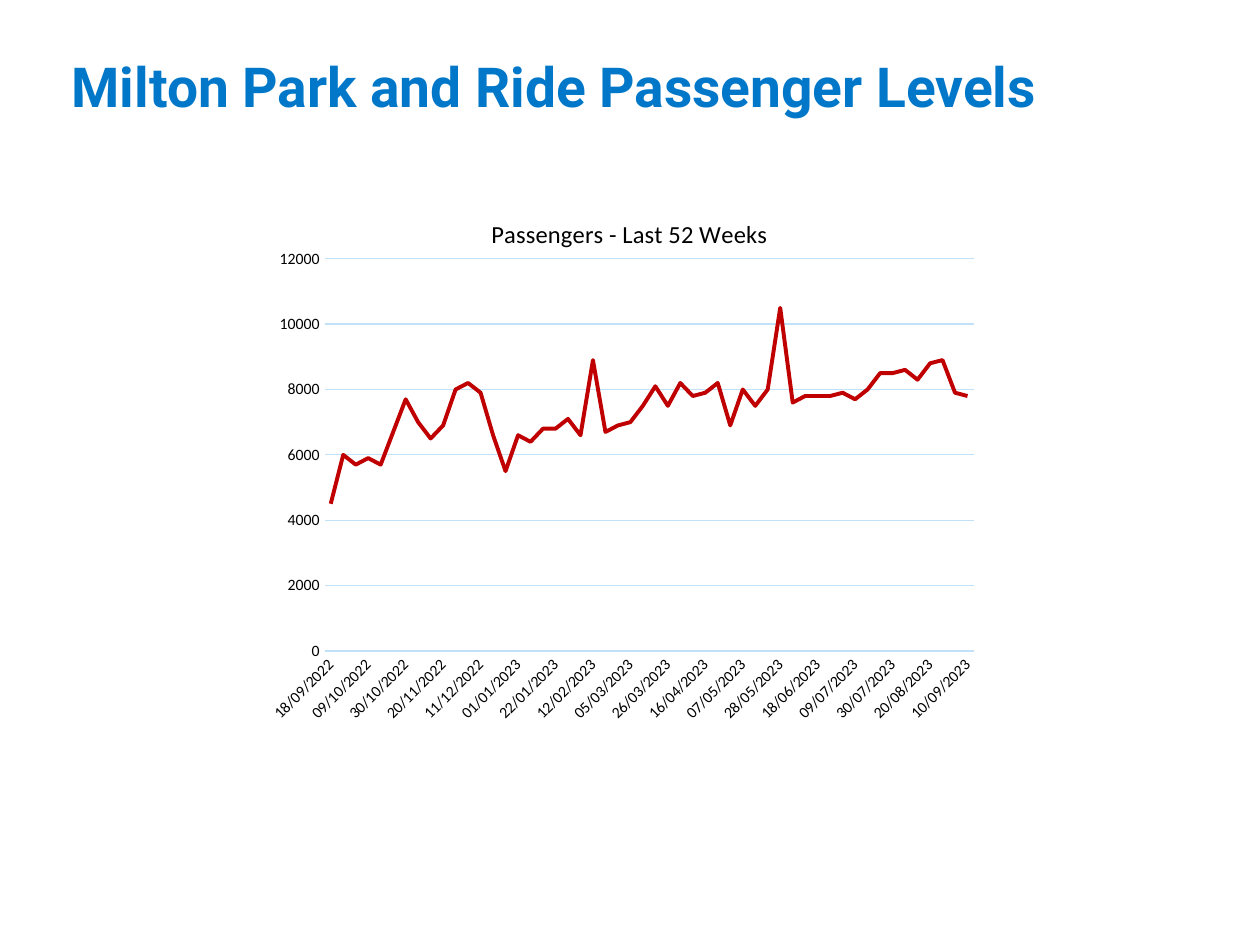
from lxml.etree import SubElement
from pptx import Presentation
from pptx.chart.data import CategoryChartData as Data
from pptx.dml.color import RGBColor
from pptx.enum.chart import XL_CHART_TYPE as Kind, XL_TICK_MARK as Tick
from pptx.enum.text import MSO_ANCHOR as Anchor, PP_ALIGN as Align
from pptx.oxml.ns import qn
from pptx.util import Inches, Pt

WIDE, HIGH = Inches(10), Inches(7.5)
FIRST_DAY, WEEK = 44822, 7  # serial number of 18/09/2022
DATE = "dd/mm/yyyy"
RIDERS = [
    4500, 6000, 5700, 5900, 5700, 6700, 7700, 7000, 6500, 6900, 8000, 8200, 7900,
    6600, 5500, 6600, 6400, 6800, 6800, 7100, 6600, 8900, 6700, 6900, 7000, 7500,
    8100, 7500, 8200, 7800, 7900, 8200, 6900, 8000, 7500, 8000, 10500, 7600, 7800,
    7800, 7800, 7900, 7700, 8000, 8500, 8500, 8600, 8300, 8800, 8900, 7900, 7800,
]


def color(code):
    return RGBColor.from_string(code)


def style(font, face, size, code, bold=False):
    font.name, font.size, font.bold = face, Pt(size), bold
    font.color.rgb = color(code)


def stroke(line, code, width):
    line.color.rgb = color(code)
    line.width = Pt(width)


def share(x, y, w, h):
    """Turn shares of the slide into a box."""
    return [round(v) for v in (x * WIDE, y * HIGH, w * WIDE, h * HIGH)]


def set_layout(part, **vals):
    """Place a chart part by shares of the chart's size."""
    layout = part.find(qn("c:layout"))
    if layout is None:
        layout = part.makeelement(qn("c:layout"))
        text = part.find(qn("c:tx"))
        if text is None:
            part.insert(0, layout)
        else:
            text.addnext(layout)
    for child in list(layout):
        layout.remove(child)
    manual = SubElement(layout, qn("c:manualLayout"))
    if "w" in vals:
        SubElement(manual, qn("c:layoutTarget")).set("val", "inner")
    for key in ("x", "y"):
        SubElement(manual, qn(f"c:{key}Mode")).set("val", "edge")
    for key, val in vals.items():
        SubElement(manual, qn(f"c:{key}")).set("val", str(val))


def add_title(slide, box):
    title = slide.shapes.title
    title.left, title.top, title.width, title.height = box
    frame = title.text_frame
    frame.margin_left = frame.margin_right = 0
    frame.margin_top = frame.margin_bottom = 0
    frame.vertical_anchor = Anchor.TOP
    frame.word_wrap = True
    para = frame.paragraphs[0]
    para.text = "Milton Park and Ride Passenger Levels"
    para.alignment = Align.LEFT
    para.line_spacing = Pt(34.5)
    style(para.font, "Roboto", 31.5, "0077C8", True)


def add_trend(slide, box):
    data = Data()
    data.categories = [FIRST_DAY + WEEK * i for i in range(len(RIDERS))]
    data.categories.number_format = DATE
    data.add_series("Series 1", RIDERS)
    chart = slide.shapes.add_chart(Kind.LINE, *box, data).chart
    style(chart.font, "Calibri", 10, "051C2C")
    chart.has_legend = False

    # Heading and plot area
    chart.has_title = True
    head = chart.chart_title
    para = head.text_frame.paragraphs[0]
    para.text = "Passengers - Last 52 Weeks"
    style(para.font, "Calibri", 14, "000000")
    head.include_in_layout = False
    set_layout(head._element, x=0.306, y=0.03)
    plot = chart.plots[0]
    plot.vary_by_categories = False
    set_layout(plot._element.getparent(), x=0.085, y=0.114, w=0.884, h=0.707)

    # Passenger line
    line = plot.series[0]
    line.smooth = False
    stroke(line.format.line, "C00000", 2.25)

    # Axes: one evenly spaced slot a week, every third one labelled
    days, count = chart.category_axis, chart.value_axis
    for axis in (days, count):
        axis.major_tick_mark = axis.minor_tick_mark = Tick.NONE
        style(axis.tick_labels.font, "Calibri", 9, "000000")
    stroke(days.format.line, "C1E1F8", 0.75)
    days.tick_labels.number_format = DATE
    days.tick_labels.number_format_is_linked = False
    root = days._element
    root.find(qn("c:txPr")).find(qn("a:bodyPr")).set("rot", "-2700000")
    root.find(qn("c:auto")).set("val", "0")
    skip = root.makeelement(qn("c:tickLblSkip"), {"val": "3"})
    root.find(qn("c:noMultiLvlLbl")).addprevious(skip)
    count.minimum_scale, count.maximum_scale, count.major_unit = 0, 12000, 2000
    count.format.line.fill.background()
    stroke(count.major_gridlines.format.line, "C1E1F8", 0.75)


def main():
    deck = Presentation()
    deck.slide_width, deck.slide_height = WIDE, HIGH
    slide = deck.slides.add_slide(deck.slide_layouts[5])
    add_title(slide, share(0.057, 0.061, 0.882, 0.065))
    add_trend(slide, share(0.208, 0.207, 0.583, 0.587))
    deck.save("out.pptx")


if __name__ == "__main__":
    main()
